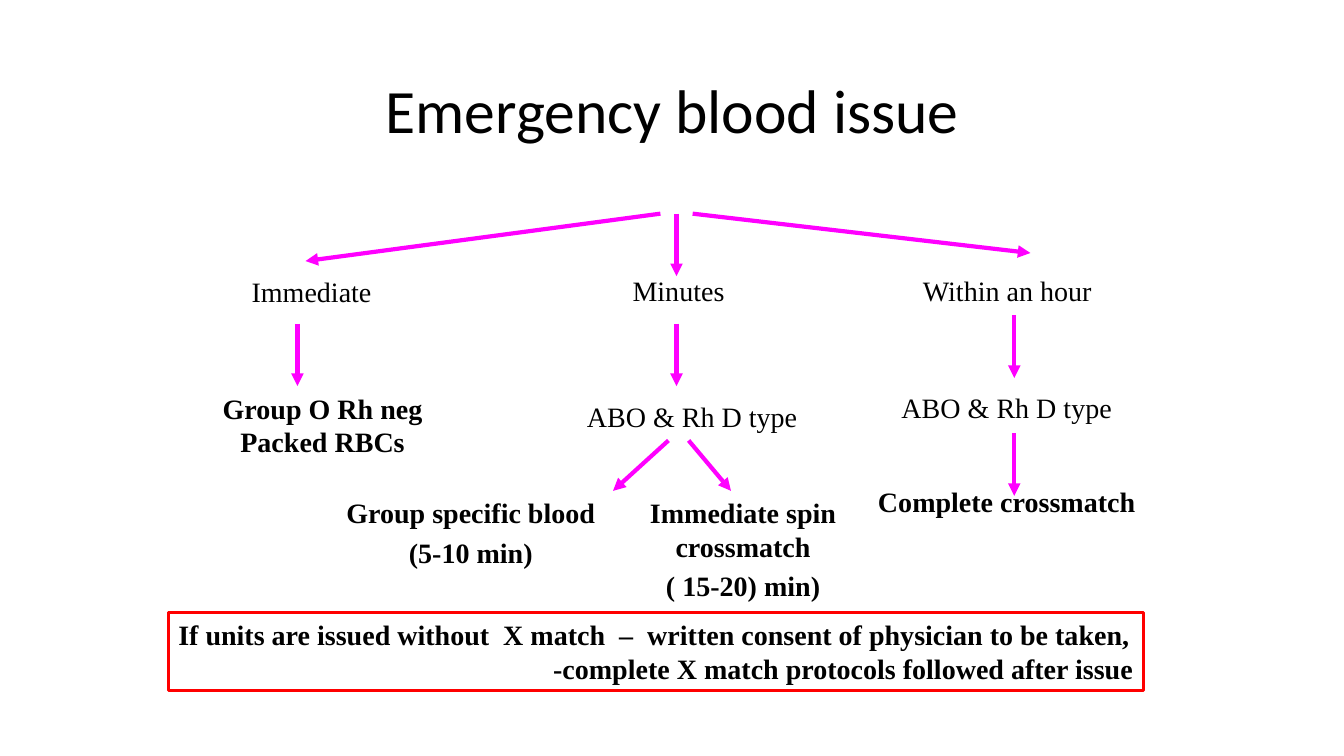
from dataclasses import dataclass

from lxml import etree
from pptx import Presentation
from pptx.dml.color import RGBColor
from pptx.enum.shapes import MSO_CONNECTOR, MSO_SHAPE
from pptx.enum.text import MSO_ANCHOR, PP_ALIGN
from pptx.oxml.ns import qn
from pptx.util import Inches, Pt

STRAIGHT = MSO_CONNECTOR.STRAIGHT
RECTANGLE = MSO_SHAPE.RECTANGLE
LEFT, CENTER, RIGHT = PP_ALIGN.LEFT, PP_ALIGN.CENTER, PP_ALIGN.RIGHT
TOP, MIDDLE = MSO_ANCHOR.TOP, MSO_ANCHOR.MIDDLE
TITLE_ONLY = 5


@dataclass(frozen=True)
class Theme:
    text: RGBColor = RGBColor(0, 0, 0)
    arrow: RGBColor = RGBColor(0xFF, 0, 0xFF)
    frame: RGBColor = RGBColor(0xFF, 0, 0)
    title_font: str = "Calibri"
    body_font: str = "Times New Roman"
    title_size: int = 44
    body_size: int = 20
    arrow_width: int = 3
    frame_width: int = 2
    space_before: int = 4


THEME = Theme()

# Content: lines of text, bold, (left, top, width, height) in inches
TITLE = "Emergency blood issue"
LABELS = [
    (["Immediate"], False, (1.92, 2.67, 2.34, 0.54)),
    (["Minutes"], False, (5.56, 2.66, 2.34, 0.54)),
    (["Within an hour "], False, (8.55, 2.66, 2.95, 0.54)),
    (["Group O Rh neg Packed RBCs"], True, (1.92, 3.83, 2.56, 0.85)),
    (["ABO & Rh D type"], False, (5.35, 3.91, 3.03, 0.54)),
    (["ABO & Rh D type"], False, (8.47, 3.83, 3.03, 0.54)),
    (["Group specific blood", "(5-10 min)"], True, (3.25, 4.87, 2.84, 0.75)),
    (["Immediate spin crossmatch", "( 15-20) min)"], True, (6.08, 4.87, 2.58, 1)),
    (["Complete crossmatch"], True, (8.47, 4.76, 3.03, 0.7)),
]
CONSENT_NOTE = [
    "If units are issued without  X match  –  written consent of physician to be taken,",
    "-complete X match protocols followed after issue",
]

# Arrows: slanted ones by both ends, vertical ones by their start
BRANCHES = [
    (6.55, 2.12, 3.03, 2.59),
    (6.87, 2.12, 10.22, 2.51),
    (6.63, 4.37, 6.08, 4.87),
    (6.83, 4.37, 7.25, 4.87),
]
DROP_LENGTH = 0.62
DROPS = [(6.71, 2.12), (2.95, 3.21), (6.71, 3.21), (10.06, 3.13), (10.06, 4.3)]


def inches(values):
    return [Inches(value) for value in values]


def write_lines(shape, lines, bold, alignments, space_before=0):
    text_frame = shape.text_frame
    text_frame.word_wrap = True
    text_frame.text = "\n".join(lines)
    for paragraph, alignment in zip(text_frame.paragraphs, alignments):
        paragraph.alignment = alignment
        paragraph.space_before = Pt(space_before)
        style_font(paragraph.runs[0].font, THEME.body_font, THEME.body_size, bold)


def style_font(font, name, size, bold=False):
    font.name = name
    font.size = Pt(size)
    font.bold = bold
    font.color.rgb = THEME.text


def add_arrow(slide, ends):
    connector = slide.shapes.add_connector(STRAIGHT, *inches(ends))
    connector.line.color.rgb = THEME.arrow
    connector.line.width = Pt(THEME.arrow_width)
    line = connector.line._get_or_add_ln()
    etree.SubElement(line, qn("a:tailEnd")).set("type", "triangle")
    etree.SubElement(connector._element.spPr, qn("a:effectLst"))


def add_title(slide):
    title = slide.shapes.title
    title.left, title.top, title.width, title.height = inches((0.92, 0.4, 11.5, 1.45))
    title.text_frame.text = TITLE
    title.text_frame.vertical_anchor = MIDDLE
    paragraph = title.text_frame.paragraphs[0]
    paragraph.alignment = CENTER
    paragraph.line_spacing = 0.9
    style_font(paragraph.runs[0].font, THEME.title_font, THEME.title_size)


def add_consent_note(slide):
    note = slide.shapes.add_shape(RECTANGLE, *inches((1.67, 6.08, 9.67, 0.77)))
    note.shadow.inherit = False
    note.fill.background()
    note.line.color.rgb = THEME.frame
    note.line.width = Pt(THEME.frame_width)
    note.text_frame.vertical_anchor = TOP
    write_lines(note, CONSENT_NOTE, True, [LEFT, RIGHT])


def main():
    presentation = Presentation()
    presentation.slide_width, presentation.slide_height = inches((13.33, 7.5))
    slide = presentation.slides.add_slide(presentation.slide_layouts[TITLE_ONLY])
    add_title(slide)

    # Decision tree
    for lines, bold, box in LABELS:
        label = slide.shapes.add_textbox(*inches(box))
        write_lines(label, lines, bold, [CENTER] * len(lines), THEME.space_before)
    drops = [(x, y, x, y + DROP_LENGTH) for x, y in DROPS]
    for ends in BRANCHES + drops:
        add_arrow(slide, ends)

    add_consent_note(slide)
    presentation.save("out.pptx")


if __name__ == "__main__":
    main()
